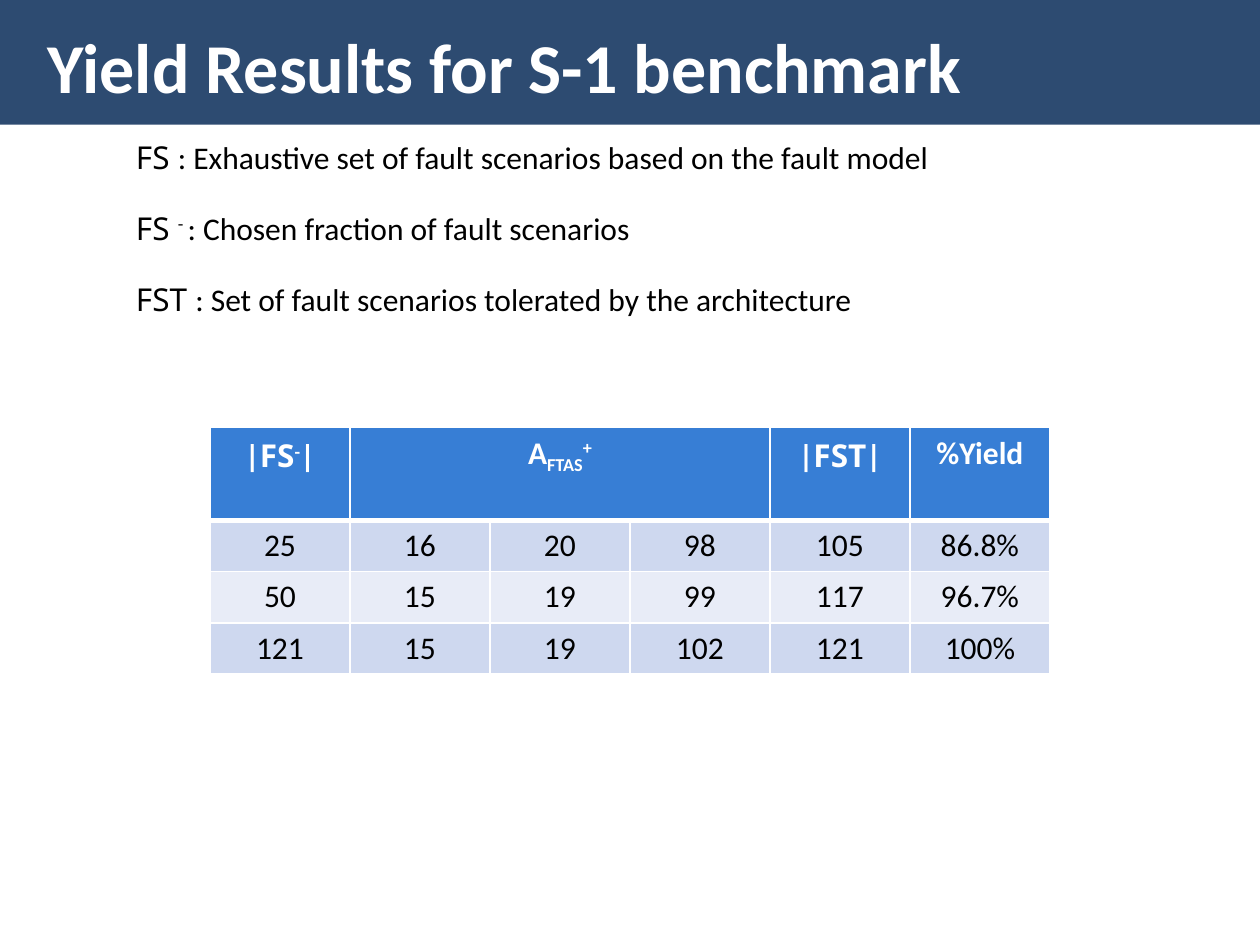
"""Build the slide with yield results for the S-1 benchmark."""
from lxml import etree
from pptx import Presentation
from pptx.dml.color import RGBColor
from pptx.enum.shapes import MSO_SHAPE
from pptx.enum.text import MSO_ANCHOR, PP_ALIGN
from pptx.oxml.ns import qn
from pptx.util import Pt

RECTANGLE = MSO_SHAPE.RECTANGLE
MIDDLE = MSO_ANCHOR.MIDDLE
LEFT, CENTER = PP_ALIGN.LEFT, PP_ALIGN.CENTER

NAVY = RGBColor(0x2D, 0x4B, 0x71)
BLUE = RGBColor(0x37, 0x7E, 0xD5)
BAND_DARK = RGBColor(0xCE, 0xD8, 0xEF)
BAND_LIGHT = RGBColor(0xE8, 0xEC, 0xF7)
WHITE = RGBColor(0xFF, 0xFF, 0xFF)
BLACK = RGBColor(0, 0, 0)

BODY, SYMBOL = "Calibri", "Noto Sans"
SUPER, SUB = 30, -25

TITLE = "Yield Results for S-1 benchmark"
DEFINITIONS = [
    [("FS ", SYMBOL, 0), (": Exhaustive set of fault scenarios based on the fault model", BODY, 0)],
    [("FS ", SYMBOL, 0), ("- ", BODY, SUPER), (": Chosen fraction of fault scenarios", BODY, 0)],
    [("FST ", SYMBOL, 0), (": Set of fault scenarios tolerated by the architecture", BODY, 0)],
]
HEADER = {
    0: [("|", BODY, 0), ("FS", SYMBOL, 0), ("-", BODY, SUPER), ("|", BODY, 0)],
    1: [("A", BODY, 0), ("FTAS", BODY, SUB), ("+", BODY, SUPER)],
    4: [("|", BODY, 0), ("FST", SYMBOL, 0), ("|", BODY, 0)],
    5: [("%Yield", BODY, 0)],
}
RESULTS = [
    ["25", "16", "20", "98", "105", "86.8%"],
    ["50", "15", "19", "99", "117", "96.7%"],
    ["121", "15", "19", "102", "121", "100%"],
]
COLUMN_WIDTH, HEADER_HEIGHT, ROW_HEIGHT = 80, 53, 29.3


def write(paragraph, pieces, color, size=18, bold=False, align=LEFT):
    paragraph.alignment = align
    paragraph.font.size = Pt(size)
    paragraph.font.bold = bold
    paragraph.font.color.rgb = color
    for text, font_name, baseline in pieces:
        run = paragraph.add_run()
        run.text = text
        run.font.name = font_name
        if baseline:
            run.font._element.set("baseline", str(baseline * 1000))


def style_cell(cell, fill, bottom_width=1):
    properties = cell._tc.get_or_add_tcPr()
    for side, width in (("L", 1), ("R", 1), ("T", 1), ("B", bottom_width)):
        line = etree.SubElement(properties, qn(f"a:ln{side}"), w=str(Pt(width)))
        solid = etree.SubElement(line, qn("a:solidFill"))
        etree.SubElement(solid, qn("a:srgbClr"), val=str(WHITE))
    cell.fill.solid()
    cell.fill.fore_color.rgb = fill


def add_heading(slide):
    banner = slide.shapes.add_shape(RECTANGLE, 0, 0, Pt(720), Pt(71.3))
    banner.shadow.inherit = False
    banner.fill.solid()
    banner.fill.fore_color.rgb = NAVY
    banner.line.fill.background()
    title = slide.shapes.add_textbox(Pt(20), Pt(7.2), Pt(680), Pt(60.5)).text_frame
    title.word_wrap = True
    title.vertical_anchor = MIDDLE
    write(title.paragraphs[0], [(TITLE, BODY, 0)], WHITE, 40, True)


def add_definitions(slide):
    frame = slide.shapes.add_textbox(Pt(70.6), Pt(77), Pt(553), Pt(138)).text_frame
    frame.word_wrap = True
    for index, pieces in enumerate(DEFINITIONS):
        paragraph = frame.add_paragraph() if index else frame.paragraphs[0]
        paragraph.line_spacing = 0.93
        if index:
            paragraph.space_before = Pt(20.5)
        write(paragraph, pieces, BLACK)


def add_results(slide):
    columns, rows = len(RESULTS[0]), len(RESULTS) + 1
    height = HEADER_HEIGHT + ROW_HEIGHT * len(RESULTS)
    table = slide.shapes.add_table(
        rows, columns, Pt(120), Pt(244.4), Pt(COLUMN_WIDTH * columns), Pt(height)
    ).table
    for column in table.columns:
        column.width = Pt(COLUMN_WIDTH)
    for index, row in enumerate(table.rows):
        row.height = Pt(ROW_HEIGHT if index else HEADER_HEIGHT)
    table.cell(0, 1).merge(table.cell(0, 3))
    for column in range(columns):
        style_cell(table.cell(0, column), BLUE, 3)
    for column, pieces in HEADER.items():
        paragraph = table.cell(0, column).text_frame.paragraphs[0]
        write(paragraph, pieces, WHITE, bold=True, align=CENTER)
    for row, values in enumerate(RESULTS, 1):
        for column, value in enumerate(values):
            cell = table.cell(row, column)
            style_cell(cell, BAND_DARK if row % 2 else BAND_LIGHT)
            write(cell.text_frame.paragraphs[0], [(value, BODY, 0)], BLACK, align=CENTER)


def main():
    deck = Presentation()
    deck.slide_width, deck.slide_height = Pt(720), Pt(540)
    slide = deck.slides.add_slide(deck.slide_layouts[6])
    add_heading(slide)
    add_definitions(slide)
    add_results(slide)
    deck.save("out.pptx")


if __name__ == "__main__":
    main()
